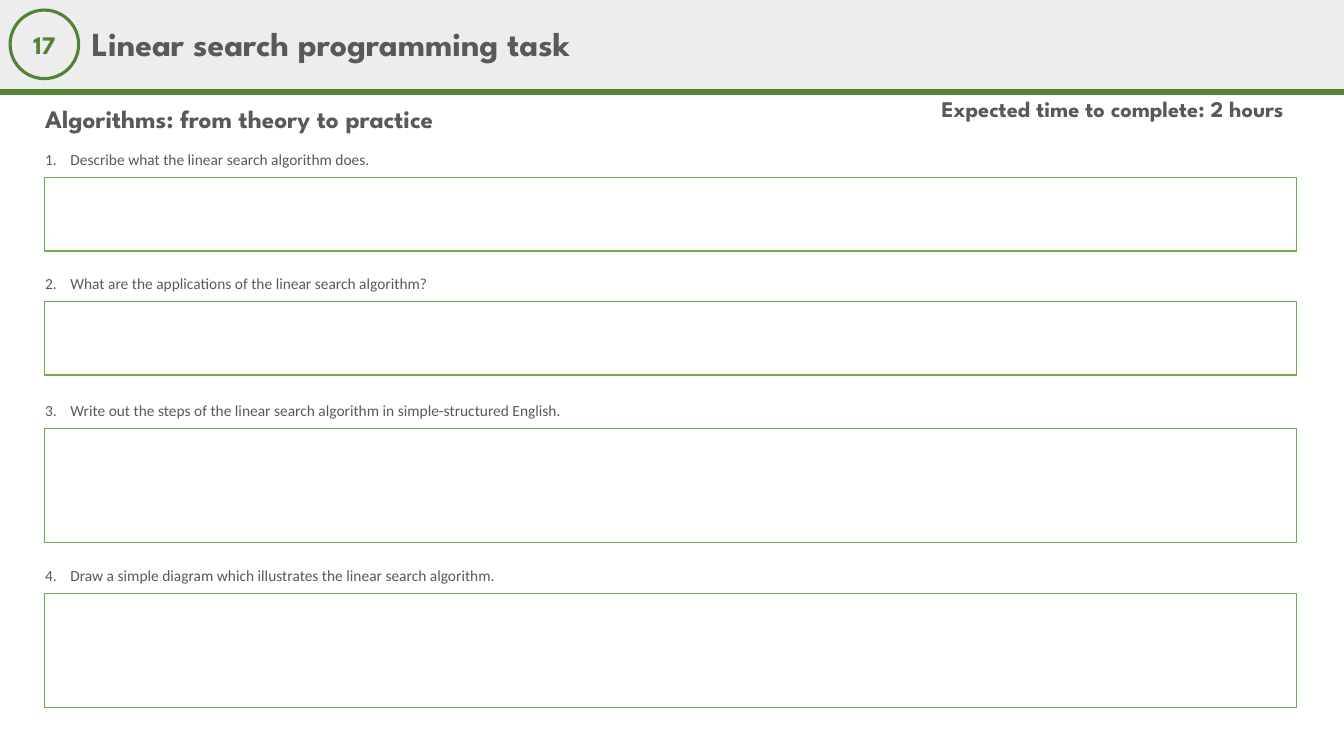
from dataclasses import dataclass

from lxml import etree
from pptx import Presentation
from pptx.dml.color import RGBColor
from pptx.enum.shapes import MSO_CONNECTOR, MSO_SHAPE
from pptx.enum.text import MSO_ANCHOR, MSO_AUTO_SIZE, PP_ALIGN
from pptx.oxml.ns import qn
from pptx.util import Inches, Pt

LEFT, CENTER = PP_ALIGN.LEFT, PP_ALIGN.CENTER
TOP, MIDDLE = MSO_ANCHOR.TOP, MSO_ANCHOR.MIDDLE
RECTANGLE, OVAL = MSO_SHAPE.RECTANGLE, MSO_SHAPE.OVAL

TASK_NUMBER = "17"
TITLE = "Linear search programming task"
SUBTITLE = "Algorithms: from theory to practice"
DURATION = "Expected time to complete: 2 hours"
# Question, top of its answer box, height of its answer box
QUESTIONS = [
    ("Describe what the linear search algorithm does.", 1.76, 0.73),
    ("What are the applications of the linear search algorithm?", 2.99, 0.73),
    ("Write out the steps of the linear search algorithm in simple-structured English.", 4.25, 1.13),
    ("Draw a simple diagram which illustrates the linear search algorithm.", 5.89, 1.13),
]


@dataclass(frozen=True)
class Theme:
    heading_font: str = "League Spartan"
    body_font: str = "Calibri"
    text: RGBColor = RGBColor(0x59, 0x59, 0x59)
    band: RGBColor = RGBColor(0xED, 0xED, 0xED)
    dark_green: RGBColor = RGBColor(0x53, 0x81, 0x35)
    green: RGBColor = RGBColor(0x70, 0xAD, 0x47)
    title_size: int = 24
    subtitle_size: int = 18
    duration_size: int = 16
    body_size: int = 11


THEME = Theme()
SLIDE_WIDTH, SLIDE_HEIGHT = 13.33, 7.5
BAND_HEIGHT = 0.91
ANSWER_LEFT, ANSWER_WIDTH = 0.44, 12.42
QUESTION_LEFT, QUESTION_WIDTH, QUESTION_HEIGHT = 0.35, 6.67, 0.29
QUESTION_RISE = 0.32
NUMBER_INDENT = 0.25


def write(shape, text, size, color=THEME.text, font=THEME.heading_font, bold=True,
          align=LEFT, anchor=TOP, spacing=0.9):
    frame = shape.text_frame
    frame.word_wrap = True
    frame.auto_size = MSO_AUTO_SIZE.NONE
    frame.vertical_anchor = anchor
    paragraph = frame.paragraphs[0]
    paragraph.alignment = align
    paragraph.line_spacing = spacing
    run = paragraph.add_run()
    run.text = text
    run.font.name = font
    run.font.size = Pt(size)
    run.font.bold = bold
    run.font.color.rgb = color
    return paragraph


def add_box(slide, kind, left, top, width, height, fill=None, line=None, line_width=1):
    shape = slide.shapes.add_shape(kind, Inches(left), Inches(top), Inches(width), Inches(height))
    shape.shadow.inherit = False
    if fill is None:
        shape.fill.background()
    else:
        shape.fill.solid()
        shape.fill.fore_color.rgb = fill
    if line is None:
        shape.line.fill.background()
    else:
        shape.line.color.rgb = line
        shape.line.width = Pt(line_width)
    return shape


def add_text(slide, left, top, width, height, text, size, **style):
    box = slide.shapes.add_textbox(Inches(left), Inches(top), Inches(width), Inches(height))
    return write(box, text, size, **style)


def number_paragraph(paragraph, start):
    properties = paragraph._p.get_or_add_pPr()
    properties.set("marL", str(Inches(NUMBER_INDENT)))
    properties.set("indent", str(-Inches(NUMBER_INDENT)))
    etree.SubElement(properties, qn("a:buFont"), typeface="+mj-lt")
    etree.SubElement(properties, qn("a:buAutoNum"), type="arabicPeriod", startAt=str(start))


def add_header(slide):
    add_box(slide, RECTANGLE, 0, 0, SLIDE_WIDTH, BAND_HEIGHT, fill=THEME.band)
    rule = slide.shapes.add_connector(MSO_CONNECTOR.STRAIGHT, 0, Inches(BAND_HEIGHT),
                                      Inches(SLIDE_WIDTH), Inches(BAND_HEIGHT))
    rule.line.color.rgb = THEME.dark_green
    rule.line.width = Pt(4.5)
    etree.SubElement(rule._element.spPr, qn("a:effectLst"))

    badge = add_box(slide, OVAL, 0.1, 0.1, 0.68, 0.68, line=THEME.dark_green, line_width=2.25)
    write(badge, TASK_NUMBER, THEME.subtitle_size, color=THEME.dark_green,
          align=CENTER, anchor=MIDDLE, spacing=1.0)

    title = slide.shapes.title
    title.left, title.top = Inches(0.81), Inches(0.09)
    title.width, title.height = Inches(10.31), Inches(0.73)
    write(title, TITLE, THEME.title_size, anchor=MIDDLE)
    # The title comes first in the layout, so bring it in front of the band
    slide.shapes._spTree.append(title._element)

    add_text(slide, 9.24, 0.93, 4.09, 0.4, DURATION, THEME.duration_size)
    add_text(slide, 0.35, 0.99, 8.43, 0.4, SUBTITLE, THEME.subtitle_size, anchor=MIDDLE)


def add_questions(slide):
    for number, (question, top, height) in enumerate(QUESTIONS, start=1):
        add_box(slide, RECTANGLE, ANSWER_LEFT, top, ANSWER_WIDTH, height, line=THEME.green)
        paragraph = add_text(slide, QUESTION_LEFT, top - QUESTION_RISE, QUESTION_WIDTH,
                             QUESTION_HEIGHT, question, THEME.body_size,
                             font=THEME.body_font, bold=False, spacing=1.0)
        number_paragraph(paragraph, number)
        paragraph.font.size = Pt(THEME.body_size)


def main():
    presentation = Presentation()
    presentation.slide_width = Inches(SLIDE_WIDTH)
    presentation.slide_height = Inches(SLIDE_HEIGHT)
    slide = presentation.slides.add_slide(presentation.slide_layouts[5])
    add_header(slide)
    add_questions(slide)
    presentation.save("out.pptx")


if __name__ == "__main__":
    main()
